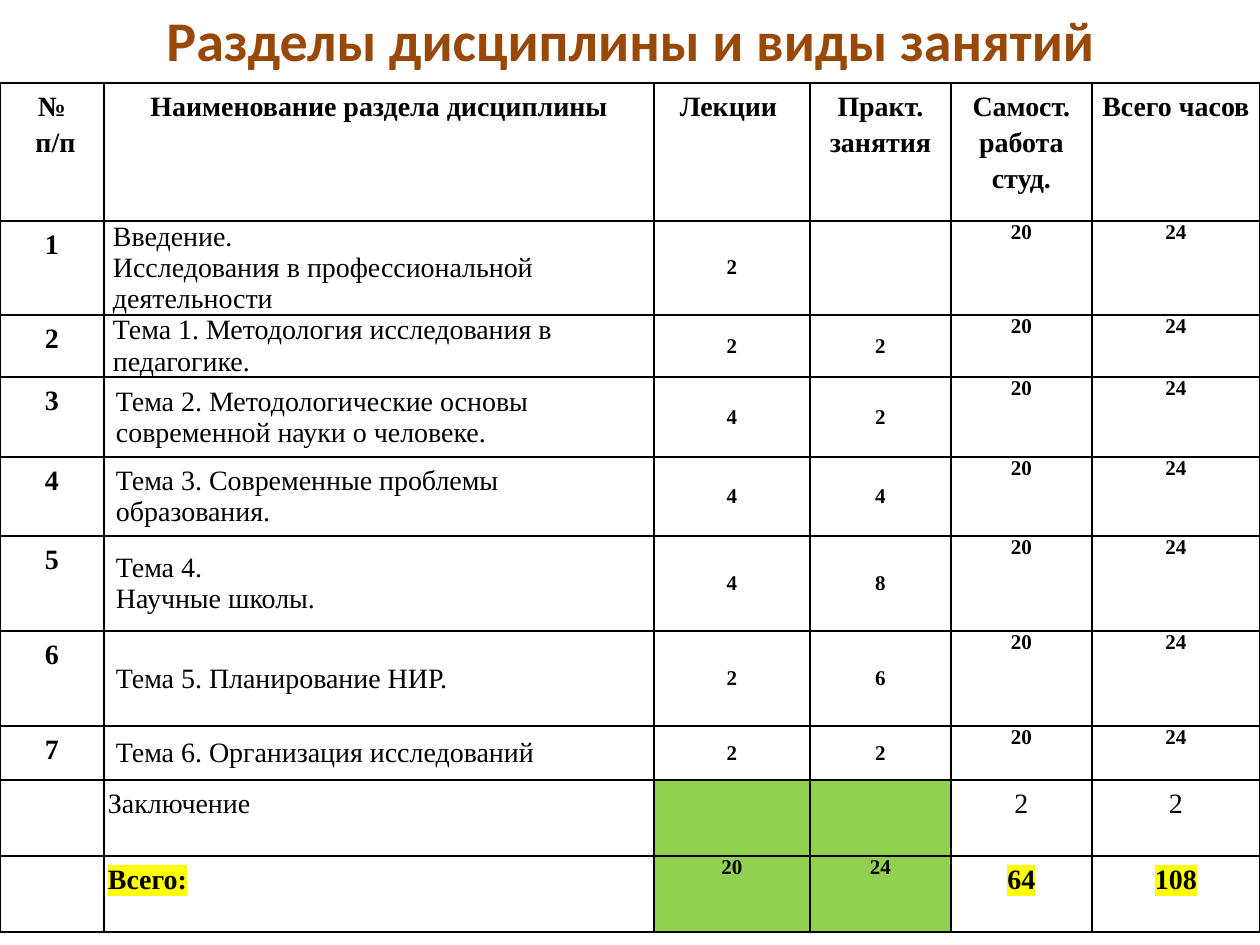
from lxml.etree import SubElement, Element
from pptx import Presentation
from pptx.dml.color import RGBColor
from pptx.enum.text import MSO_ANCHOR as Anchor, PP_ALIGN as Align
from pptx.oxml.ns import qn
from pptx.util import Pt

TITLE = "Разделы дисциплины и виды занятий"
HEADER = ["№\n п/п", "Наименование раздела дисциплины", "Лекции ",
          "Практ. занятия", "Самост. работа студ.", "Всего часов"]
TOPICS = [
    ("1", "Введение.\nИсследования в профессиональной деятельности", "2", "", "20", "24"),
    ("2", "Тема 1. Методология исследования в педагогике.", "2", "2", "20", "24"),
    ("3", "Тема 2. Методологические основы современной науки о человеке.", "4", "2", "20", "24"),
    ("4", "Тема 3. Современные проблемы образования.", "4", "4", "20", "24"),
    ("5", "Тема 4.\nНаучные школы.", "4", "8", "20", "24"),
    ("6", "Тема 5. Планирование НИР.", "2", "6", "20", "24"),
    ("7", "Тема 6. Организация исследований", "2", "2", "20", "24"),
]
CLOSING = ["", "Заключение", "", "", "2", "2"]
TOTAL = ["", "Всего:", "20", "24", "64", "108"]
COLS = [104, 550, 156, 141, 141, 168]
ROWS = [138, 94, 62, 80, 79, 95, 95, 54, 76, 76]

BLACK = RGBColor(0x00, 0x00, 0x00)
BROWN = RGBColor(0x98, 0x48, 0x07)
GREEN = RGBColor(0x92, 0xD0, 0x50)
YELLOW = RGBColor(0xFF, 0xFF, 0x00)

LOOSE = dict(margins=(4, 4), spacing=1.15)
TIGHT = dict(size=12, margins=(9, 0))
NAME = dict(bold=False, align=Align.LEFT, anchor=Anchor.MIDDLE)


def px(n):
    return int(n * 914400 / 126)


def write(tf, text, size=16, bold=True, color=BLACK, font="Times New Roman",
          align=Align.CENTER, spacing=None, highlight=None):
    for i, line in enumerate(text.split("\n")):
        p = tf.paragraphs[0] if i == 0 else tf.add_paragraph()
        p.alignment = align
        if spacing:
            p.line_spacing = spacing
        r = p.add_run()
        r.text = line
        r.font.size, r.font.bold = Pt(size), bold
        r.font.color.rgb = color
        if highlight:
            mark = SubElement(r.font._element, qn("a:highlight"))
            SubElement(mark, qn("a:srgbClr"), val=str(highlight))
        r.font.name = font


def add_borders(cell):
    tc_pr = cell._tc.get_or_add_tcPr()
    for i, side in enumerate(("lnL", "lnR", "lnT", "lnB")):
        ln = Element(qn(f"a:{side}"), w=str(Pt(1)))
        SubElement(SubElement(ln, qn("a:solidFill")), qn("a:srgbClr"), val=str(BLACK))
        tc_pr.insert(i, ln)


def fill_cell(cell, text, margins=(4, 4), anchor=Anchor.TOP, fill=None, **fmt):
    side, edge = map(px, margins)
    cell.margin_left = cell.margin_right = side
    cell.margin_top = cell.margin_bottom = edge
    cell.vertical_anchor = anchor
    if fill:
        cell.fill.solid()
        cell.fill.fore_color.rgb = fill
    else:
        cell.fill.background()
    add_borders(cell)
    if text:
        write(cell.text_frame, text, **fmt)


def cell_format(row, col):
    if row == 0 or col == 0:
        return LOOSE
    if row <= len(TOPICS):
        if col == 1:
            return dict(NAME, margins=(9 if row < 3 else 12, 0))
        return dict(TIGHT, anchor=Anchor.MIDDLE if col < 4 else Anchor.TOP)
    if col in (2, 3):
        return dict(TIGHT, fill=GREEN)
    is_total = row == len(TOPICS) + 2
    return dict(LOOSE, bold=is_total, highlight=YELLOW if is_total else None,
                align=Align.LEFT if col == 1 else Align.CENTER)


def main():
    prs = Presentation()
    prs.slide_width, prs.slide_height = px(1260), px(945)
    s = prs.slides.add_slide(prs.slide_layouts[5])

    title = s.shapes.title
    title.left, title.top, title.width, title.height = map(px, (64, 1, 1134, 77))
    title.text_frame.vertical_anchor = Anchor.MIDDLE
    write(title.text_frame, TITLE, size=32, color=BROWN, font="Calibri")

    data = [HEADER, *TOPICS, CLOSING, TOTAL]
    table = s.shapes.add_table(len(ROWS), len(COLS), 0, px(83),
                               px(sum(COLS)), px(sum(ROWS))).table
    table.first_row = table.horz_banding = False
    for column, width in zip(table.columns, COLS):
        column.width = px(width)
    for i, (row, height) in enumerate(zip(table.rows, ROWS)):
        row.height = px(height)
        for j, text in enumerate(data[i]):
            fill_cell(table.cell(i, j), text, **cell_format(i, j))

    prs.save("out.pptx")


if __name__ == "__main__":
    main()
